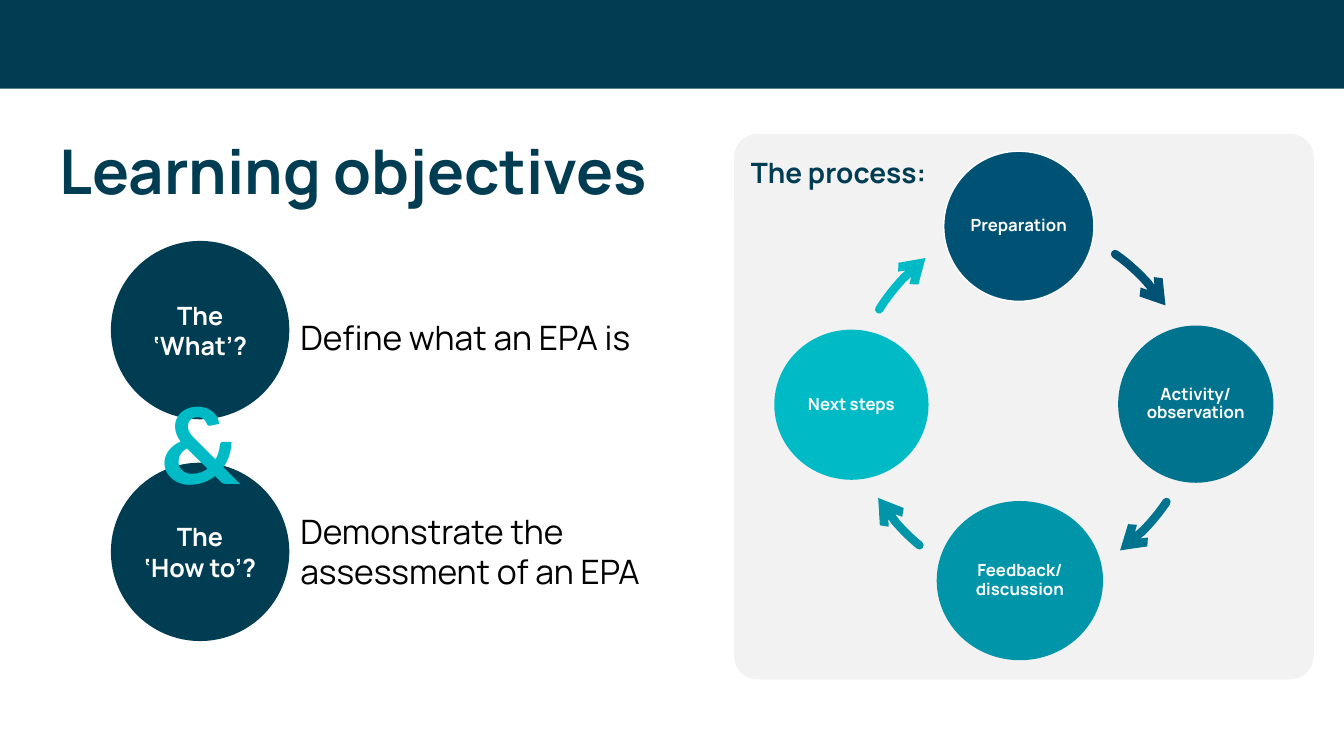
"""Build the learning objectives slide with its four-step process cycle."""
from dataclasses import dataclass

from lxml import etree
from pptx import Presentation
from pptx.dml.color import RGBColor
from pptx.enum.shapes import MSO_SHAPE
from pptx.enum.text import MSO_ANCHOR, PP_ALIGN
from pptx.oxml.ns import qn
from pptx.util import Inches, Pt

RECT, ROUNDED, OVAL = MSO_SHAPE.RECTANGLE, MSO_SHAPE.ROUNDED_RECTANGLE, MSO_SHAPE.OVAL
TOP, MIDDLE = MSO_ANCHOR.TOP, MSO_ANCHOR.MIDDLE
LEFT, CENTER = PP_ALIGN.LEFT, PP_ALIGN.CENTER

NAVY = RGBColor(0x00, 0x3C, 0x52)
BLUE = RGBColor(0x00, 0x52, 0x74)
OCEAN = RGBColor(0x00, 0x73, 0x8F)
TEAL = RGBColor(0x00, 0x95, 0xA9)
AQUA = RGBColor(0x00, 0xBA, 0xC6)
PALE = RGBColor(0xF2, 0xF2, 0xF2)
WHITE = RGBColor(0xFF, 0xFF, 0xFF)
BLACK = RGBColor(0x00, 0x00, 0x00)
CURVE_STEPS = 10

Box = tuple[float, float, float, float]
Point = tuple[float, float]


@dataclass(frozen=True)
class TextStyle:
    size: int
    color: RGBColor
    bold: bool = True
    font: str = "Manrope"
    align: PP_ALIGN = LEFT
    anchor: MSO_ANCHOR = TOP
    spacing: float = 1.0
    side_inset: float = 0.1
    wrap: bool = True


@dataclass(frozen=True)
class Label:
    text: str
    box: Box
    style: TextStyle


@dataclass(frozen=True)
class Step:
    name: str
    box: Box
    color: RGBColor
    curve: tuple[Point, Point, Point, Point]


TITLE = TextStyle(44, NAVY, anchor=MIDDLE, spacing=0.9)
HEADING = TextStyle(20, NAVY)
BODY = TextStyle(24, BLACK, bold=False)
AMPERSAND = TextStyle(80, AQUA, font="Calibri", align=CENTER)
QUESTION = TextStyle(18, WHITE, align=CENTER, anchor=MIDDLE)
OPEN_QUESTION = TextStyle(18, WHITE, align=CENTER, anchor=MIDDLE, wrap=False)
STEP = TextStyle(12, WHITE, align=CENTER, anchor=MIDDLE, spacing=0.9, side_inset=0.01)

QUESTIONS = [
    Label("The ‘What’?", (1.1, 2.39, 1.77, 1.77), QUESTION),
    Label("The\n‘How to’?", (1.1, 4.59, 1.77, 1.77), OPEN_QUESTION),
]
LABELS = [
    Label("Learning objectives", (0.49, 1.01, 11.5, 1.45), TITLE),
    Label("Define what an EPA is", (2.88, 3.09, 4.05, 0.5), BODY),
    Label("Demonstrate the assessment of an EPA", (2.88, 5.02, 4.05, 0.91), BODY),
    Label("&", (1.44, 3.65, 1.1, 1.45), AMPERSAND),
    Label("The process:", (7.35, 1.49, 4.05, 0.44), HEADING),
]
STEPS = [
    Step("Preparation", (9.36, 1.5, 1.49, 1.49), BLUE,
         ((11.06, 2.52), (11.25, 2.65), (11.42, 2.83), (11.56, 3.03))),
    Step("Activity/ observation", (11.09, 3.23, 1.54, 1.56), OCEAN,
         ((11.57, 4.98), (11.45, 5.16), (11.29, 5.33), (11.11, 5.46))),
    Step("Feedback/ discussion", (9.29, 4.97, 1.65, 1.58), TEAL,
         ((9.12, 5.41), (8.96, 5.28), (8.82, 5.12), (8.71, 4.94))),
    Step("Next steps", (7.68, 3.27, 1.53, 1.49), AQUA,
         ((8.72, 3.07), (8.84, 2.88), (9.0, 2.7), (9.18, 2.56))),
]


def write(frame, text: str, style: TextStyle) -> None:
    frame.text = text
    frame.word_wrap = style.wrap
    frame.vertical_anchor = style.anchor
    frame.margin_left = frame.margin_right = Inches(style.side_inset)
    for paragraph in frame.paragraphs:
        paragraph.alignment = style.align
        paragraph.line_spacing = style.spacing
        paragraph.font.name = style.font
        paragraph.font.size = Pt(style.size)
        paragraph.font.bold = style.bold
        paragraph.font.color.rgb = style.color


def add_filled(slide, kind: MSO_SHAPE, box: Box, color: RGBColor):
    shape = slide.shapes.add_shape(kind, *map(Inches, box))
    shape.shadow.inherit = False
    shape.fill.solid()
    shape.fill.fore_color.rgb = color
    shape.line.fill.background()
    return shape


def add_label(slide, label: Label) -> None:
    write(slide.shapes.add_textbox(*map(Inches, label.box)).text_frame, label.text, label.style)


def curve_point(curve: tuple[Point, Point, Point, Point], t: float) -> Point:
    weights = ((1 - t) ** 3, 3 * t * (1 - t) ** 2, 3 * t ** 2 * (1 - t), t ** 3)
    x, y = (sum(w * p[axis] for w, p in zip(weights, curve)) for axis in (0, 1))
    return Inches(x), Inches(y)


def add_arrow(slide, step: Step) -> None:
    start, *rest = [curve_point(step.curve, i / CURVE_STEPS) for i in range(CURVE_STEPS + 1)]
    builder = slide.shapes.build_freeform(*start)
    builder.add_line_segments(rest, close=False)
    arrow = builder.convert_to_shape()
    arrow.shadow.inherit = False
    arrow.fill.background()
    arrow.line.color.rgb = step.color
    arrow.line.width = Pt(6)
    line = arrow.line._get_or_add_ln()
    line.set("cap", "rnd")
    etree.SubElement(line, qn("a:tailEnd"), type="arrow")


def main() -> None:
    deck = Presentation()
    deck.slide_width, deck.slide_height = Inches(13.33), Inches(7.5)
    slide = deck.slides.add_slide(deck.slide_layouts[6])

    add_filled(slide, RECT, (0, 0, 13.33, 0.88), NAVY)
    panel = add_filled(slide, ROUNDED, (7.28, 1.33, 5.75, 5.41), PALE)
    panel.adjustments[0] = 0.043

    for step in STEPS:
        circle = add_filled(slide, OVAL, step.box, step.color)
        write(circle.text_frame, step.name, STEP)
        if step is STEPS[0]:
            circle.line.color.rgb = WHITE
            circle.line.width = Pt(1)
        add_arrow(slide, step)

    for question in QUESTIONS:
        circle = add_filled(slide, OVAL, question.box, NAVY)
        write(circle.text_frame, question.text, question.style)
    for label in LABELS:
        add_label(slide, label)

    deck.save("out.pptx")


if __name__ == "__main__":
    main()
